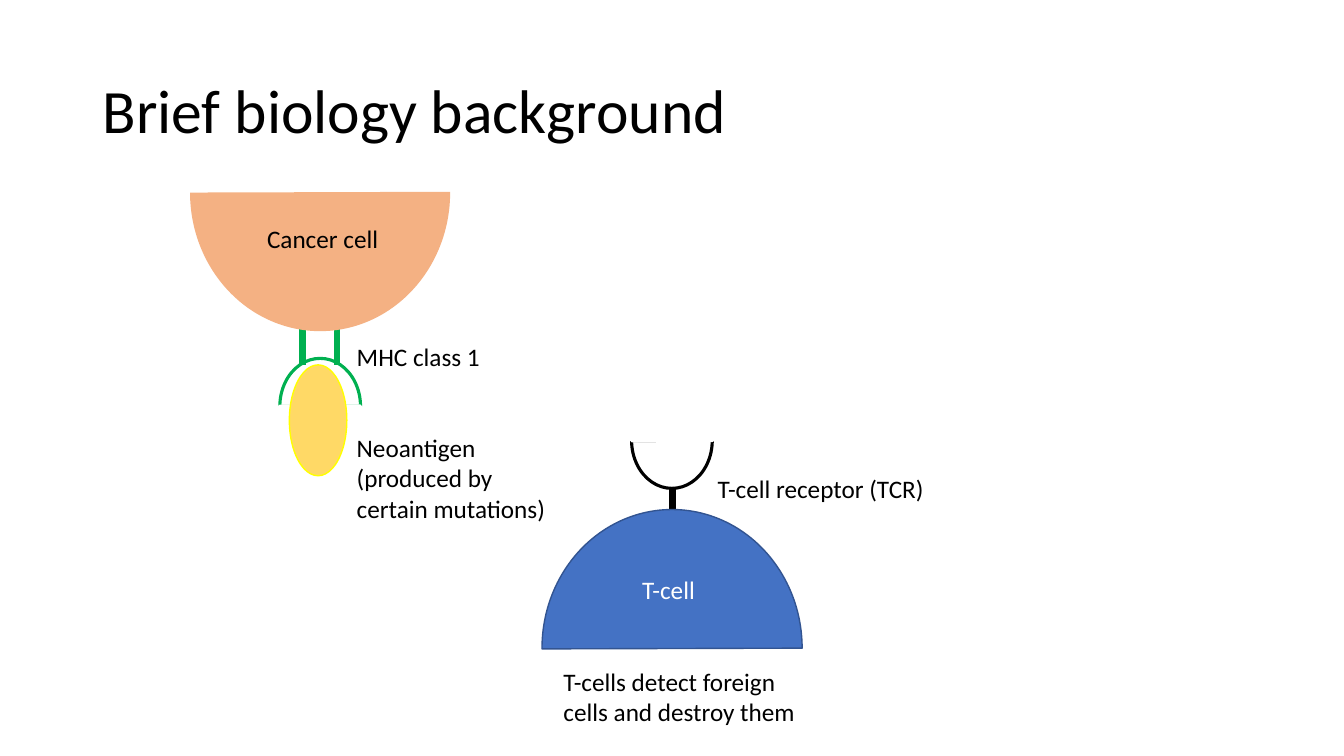
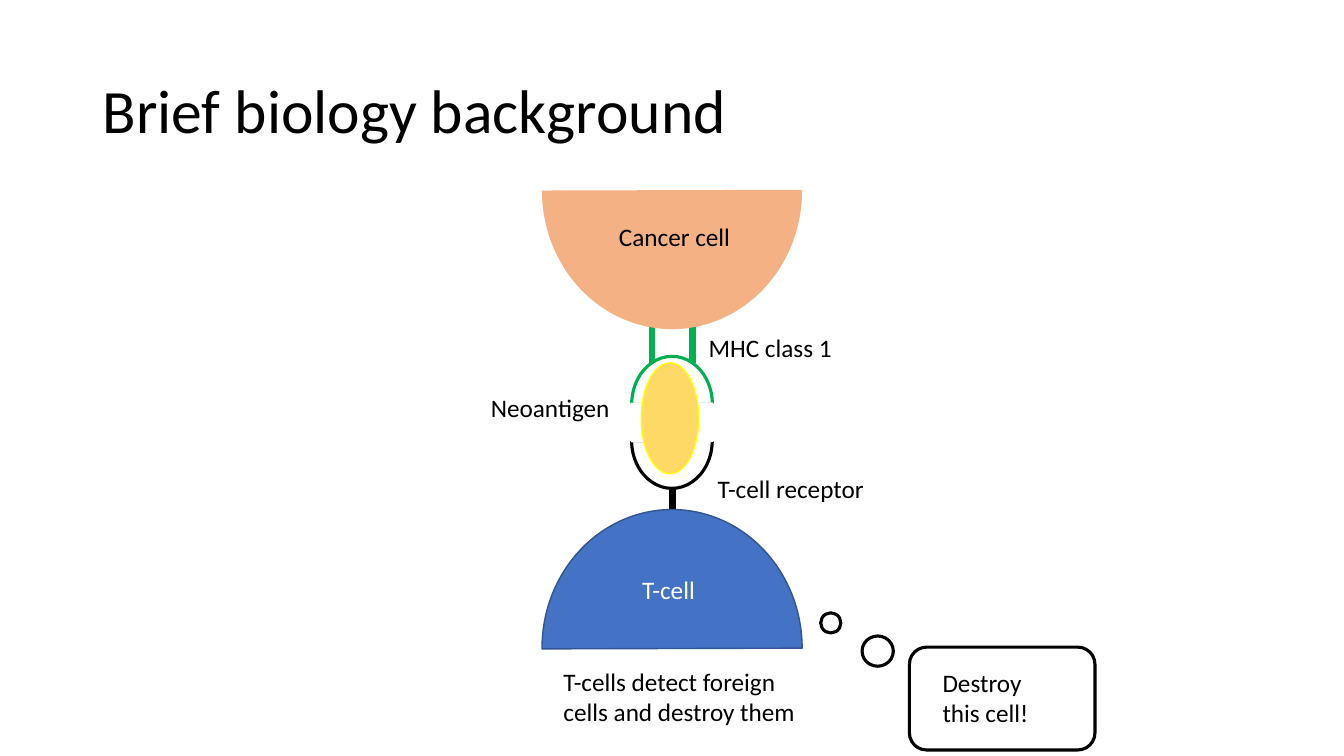
import pptx
import pptx.util
import pptx.dml.color
import pptx.enum.shapes
import pptx.enum.text
import pptx.oxml.ns
import lxml.etree

# Shared style; lengths are px, 100 to the inch
PX = 9144
FONT = "Calibri"
BLACK, WHITE = "000000", "FFFFFF"
GREEN, ORANGE, BLUE, BLUE_EDGE = "00B050", "F4B183", "4472C4", "325491"
GOLD, YELLOW = "FFD966", "FFFF00"
SHAPES = pptx.enum.shapes.MSO_SHAPE
HALF_ELLIPSE = (53.8, 162)  # chord from 90 to 270 degrees
UP, DOWN = 90, 270          # rotation that turns the round side up or down


def px(*values):
    return [pptx.util.Emu(v * PX) for v in values]


def rgb(hex_color):
    return pptx.dml.color.RGBColor.from_string(hex_color)


def write(tf, text, size=18, color=BLACK, spacing=None):
    p = tf.paragraphs[0]
    p.alignment = pptx.enum.text.PP_ALIGN.LEFT
    if spacing:
        p.line_spacing = spacing
    r = p.add_run()
    r.text = text
    r.font.name = FONT
    r.font.size = pptx.util.Pt(size)
    r.font.color.rgb = rgb(color)


def add_title_slide(prs, text):
    s = prs.slides.add_slide(prs.slide_layouts[5])
    title = s.shapes.title
    title.left, title.top, title.width, title.height = px(92, 40, 1150, 145)
    title.text_frame.vertical_anchor = pptx.enum.text.MSO_ANCHOR.MIDDLE
    write(title.text_frame, text, size=44, spacing=0.9)
    return s


def add_label(s, text, x, y, w, h=40, color=BLACK):
    tf = s.shapes.add_textbox(*px(x, y, w, h)).text_frame
    tf.word_wrap = True
    tf.auto_size = pptx.enum.text.MSO_AUTO_SIZE.SHAPE_TO_FIT_TEXT
    write(tf, text, color=color)


def add_shape(s, kind, x, y, w, h, fill=None, line=None, weight=2.25):
    sp = s.shapes.add_shape(kind, *px(x, y, w, h))
    sp.shadow.inherit = False
    if fill:
        sp.fill.solid()
        sp.fill.fore_color.rgb = rgb(fill)
    else:
        sp.fill.background()
    if line:
        sp.line.color.rgb = rgb(line)
        sp.line.width = pptx.util.Pt(weight)
    else:
        sp.line.fill.background()
    return sp


def add_half(s, facing, x, y, w, h, **style):
    sp = add_shape(s, SHAPES.CHORD, x, y, w, h, **style)
    sp.adjustments[0], sp.adjustments[1] = HALF_ELLIPSE
    sp.rotation = facing


def add_cup(s, facing, x, y, color):
    """An open arc: an outlined half whose straight edge a white half hides."""
    add_half(s, facing, x, y, 95, 80, line=color)
    add_half(s, UP + DOWN - facing, x, y, 95, 80, fill=WHITE, line=WHITE)


def add_stem(s, x, top, bottom, color):
    line = s.shapes.add_connector(pptx.enum.shapes.MSO_CONNECTOR.STRAIGHT,
                                  *px(x, top, x, bottom))
    line.line.color.rgb = rgb(color)
    line.line.width = pptx.util.Pt(4.5)
    lxml.etree.SubElement(line._element.spPr, pptx.oxml.ns.qn("a:effectLst"))


def add_t_cell(s, receptor_name):
    add_cup(s, DOWN, 619, 397, BLACK)
    add_stem(s, 667, 484, 561, BLACK)
    add_half(s, UP, 529, 514, 275, 258, fill=BLUE, line=BLUE_EDGE, weight=1)
    add_label(s, "T-cell", 627, 565, 102, color=WHITE)
    add_label(s, receptor_name, 702, 465, 259)
    add_label(s, "T-cells detect foreign cells and destroy them", 549, 656, 268, 71)


def add_cancer_cell(s, x, y, stems):
    """The cell at x, y with its MHC stems, given as offsets from x, and neoantigen."""
    add_cup(s, UP, x + 90, y + 301, GREEN)
    for offset in stems:
        add_stem(s, x + offset, y + 223, y + 300, GREEN)
    add_half(s, DOWN, x, y, 275, 258, fill=ORANGE)
    add_shape(s, SHAPES.OVAL, x + 107, y + 300, 57, 110,
              fill=GOLD, line=YELLOW, weight=1)
    add_label(s, "Cancer cell", x + 75, y + 155, 191)


def add_thought(s, text):
    add_shape(s, SHAPES.ROUNDED_RECTANGLE, 902, 642, 184, 102, line=BLACK)
    add_shape(s, SHAPES.OVAL, 814, 608, 20, 20, line=BLACK)
    add_shape(s, SHAPES.OVAL, 855, 631, 31, 30, line=BLACK)
    add_label(s, text, 925, 657, 140, 71)


def main():
    prs = pptx.Presentation()
    prs.slide_width, prs.slide_height = px(1333, 750)
    title = "Brief biology background"

    # The two cells apart
    s = add_title_slide(prs, title)
    add_t_cell(s, "T-cell receptor (TCR)")
    add_cancer_cell(s, 180, 62, stems=(120, 154))
    add_label(s, "MHC class 1", 344, 334, 156)
    add_label(s, "Neoantigen (produced by certain mutations)", 344, 424, 216, 101)

    # The receptor binds the neoantigen
    s = add_title_slide(prs, title)
    add_t_cell(s, "T-cell receptor")
    add_cancer_cell(s, 529, 60, stems=(118, 158))
    add_label(s, "MHC class 1", 693, 325, 156)
    add_label(s, "Neoantigen", 477, 384, 141)
    add_thought(s, "Destroy this cell!")

    prs.save("out.pptx")


if __name__ == "__main__":
    main()
